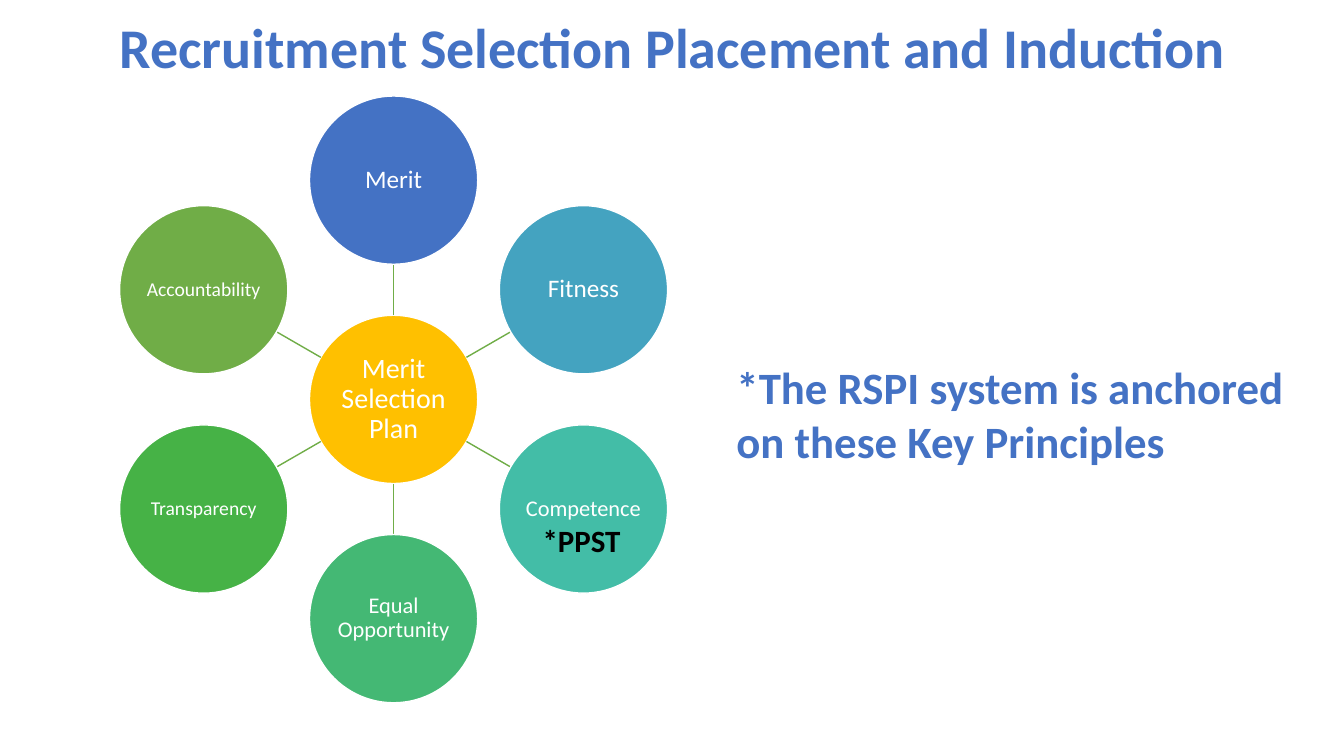
import math

import pptx
import pptx.dml.color
import pptx.enum.shapes
import pptx.enum.text
import pptx.oxml
import pptx.oxml.ns
import pptx.util

Cm = pptx.util.Cm
ALIGN = pptx.enum.text.PP_ALIGN
BLUE, WHITE = "4472C4", "FFFFFF"
SPOKE_GREEN = "70AD47"
CIRCLE = 4.24  # diameter in cm

# Clockwise from the top: label, text size, fill
PRINCIPLES = [
    ("Merit", 18, BLUE),
    ("Fitness", 18, "44A3C0"),
    ("Competence", 16, "43BDA7"),
    ("Equal Opportunity", 16, "44B874"),
    ("Transparency", 14, "46B246"),
    ("Accountability", 14, "70AD47"),
]


def color(hex_string):
    return pptx.dml.color.RGBColor.from_string(hex_string)


def write(frame, text, size, fill, bold=False, align=ALIGN.LEFT, spacing=1.0):
    frame.word_wrap = True
    para = frame.paragraphs[0]
    para.alignment = align
    para.line_spacing = spacing
    span = para.add_run()
    span.text = text
    span.font.name = "Calibri"
    span.font.size = pptx.util.Pt(size)
    span.font.bold = bold
    span.font.color.rgb = color(fill)


def add_text(page, box, text, size, fill, **options):
    frame = page.shapes.add_textbox(*map(Cm, box)).text_frame
    write(frame, text, size, fill, bold=True, **options)
    frame.auto_size = pptx.enum.text.MSO_AUTO_SIZE.SHAPE_TO_FIT_TEXT


def add_circle(page, x, y, text, size, fill):
    circle = page.shapes.add_shape(
        pptx.enum.shapes.MSO_SHAPE.OVAL,
        Cm(x - CIRCLE / 2), Cm(y - CIRCLE / 2), Cm(CIRCLE), Cm(CIRCLE))
    circle.shadow.inherit = False
    circle.fill.solid()
    circle.fill.fore_color.rgb = color(fill)
    circle.line.color.rgb = color(WHITE)
    circle.line.width = pptx.util.Pt(1)
    frame = circle.text_frame
    frame.margin_left = frame.margin_right = Cm(0.03)
    frame.margin_top = frame.margin_bottom = Cm(0.03)
    frame.vertical_anchor = pptx.enum.text.MSO_ANCHOR.MIDDLE
    write(frame, text, size, WHITE, align=ALIGN.CENTER, spacing=0.9)


def add_spoke(page, start, end):
    spoke = page.shapes.add_connector(
        pptx.enum.shapes.MSO_CONNECTOR.STRAIGHT, *map(Cm, start + end))
    spoke.line.color.rgb = color(SPOKE_GREEN)
    spoke.line.width = pptx.util.Pt(1)
    spoke._element.spPr.append(pptx.oxml.parse_xml(
        "<a:effectLst %s/>" % pptx.oxml.ns.nsdecls("a")))


def add_wheel(page, left, top, width, height):
    """Hub circle with the principles evenly spaced around it."""
    center_x, center_y = left + width / 2, top + height / 2
    orbit = (height - CIRCLE) / 2

    def point(angle, distance):
        return (center_x + distance * math.sin(angle),
                center_y - distance * math.cos(angle))

    add_circle(page, center_x, center_y, "Merit Selection Plan", 20, "FFC000")
    for index, principle in enumerate(PRINCIPLES):
        angle = 2 * math.pi * index / len(PRINCIPLES)
        add_spoke(page, point(angle, CIRCLE / 2),
                  point(angle, orbit - CIRCLE / 2))
        add_circle(page, *point(angle, orbit), *principle)

    # Note inside the Competence circle
    note_x, note_y = point(2 * math.pi / 3, orbit)
    add_text(page, (note_x - 1.28, note_y + 0.18, 2.51, 1.19),
             "*PPST", 22.1, "000000")


def main():
    deck = pptx.Presentation()
    deck.slide_width, deck.slide_height = Cm(33.87), Cm(19.05)
    page = deck.slides.add_slide(deck.slide_layouts[6])

    # Principles wheel
    add_wheel(page, 3.0, 2.42, 13.84, 15.29)

    # Title
    add_text(page, (1.83, 0.2, 30.23, 1.96),
             "Recruitment Selection Placement and Induction", 40, BLUE,
             align=ALIGN.CENTER)

    # Statement beside the wheel
    add_text(page, (18.31, 8.94, 15.04, 3.0),
             "*The RSPI system is anchored on these Key Principles", 32, BLUE)

    deck.save("out.pptx")


if __name__ == "__main__":
    main()
